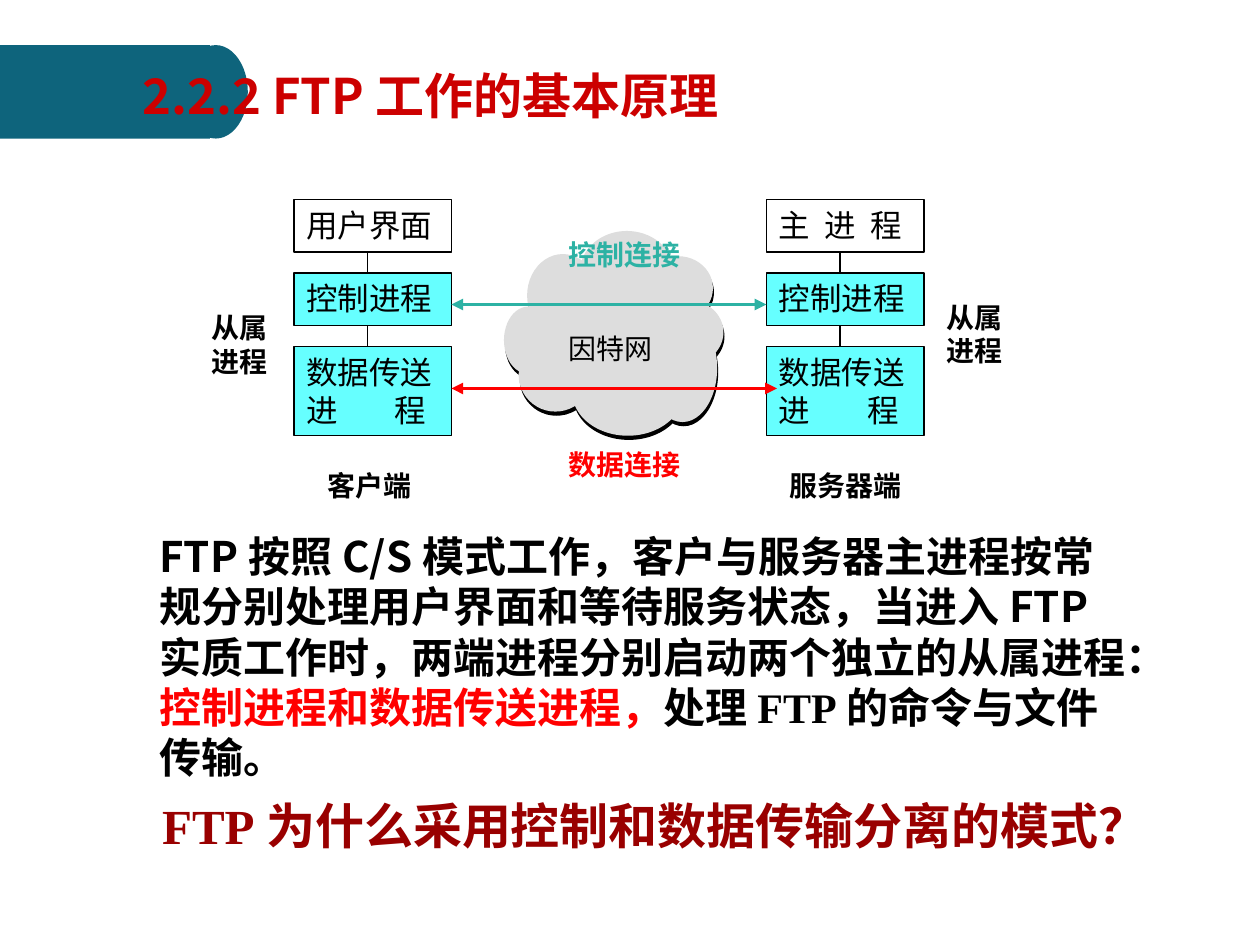
from pptx import Presentation
from pptx import util as u
from pptx.dml.color import RGBColor
from pptx.enum import shapes, text
from pptx.oxml import parse_xml
from pptx.oxml.ns import nsdecls, qn

PX = 7620
CJK, TIMES = "Noto Sans CJK SC", "Times New Roman"
BLACK, RED, TEAL, AQUA = "000000", "FF0000", "2DB2A4", "66FFFF"
BANNER, GREY = "0E647C", "DDDDDD"

puffs = [(552, 220, 90, 79), (502, 242, 68, 79), (480, 292, 46, 64),
         (494, 322, 70, 70), (545, 332, 106, 83), (613, 244, 66, 61),
         (623, 286, 66, 61), (617, 299, 66, 103), (518, 268, 136, 103)]
shades = [(BLACK, 1, 4), (GREY, 0, 0)]
rows = [(190, 50), (260, 50), (330, 85)]
fills = [None, AQUA, AQUA]
sides = [(280, ["用户界面", "控制进程", "数据传送进\t程"]),
         (730, ["主\t进\t程", "控制进程", "数据传送进\t程"])]
stops = {1: [84], 2: [43, 87]}
arrows = [(430, 730, 290, TEAL), (430, 740, 370, RED)]
labels = [("因特网", 530, 310, 110, 44, BLACK, False),
          ("客户端", 300, 440, 120, 44, BLACK, True),
          ("服务器端", 740, 440, 140, 44, BLACK, True),
          ("从属进程", 190, 290, 80, 77, BLACK, True),
          ("从属进程", 890, 280, 80, 77, BLACK, True),
          ("控制连接", 530, 220, 140, 44, TEAL, True),
          ("数据连接", 530, 420, 140, 44, RED, True)]
title = [("2.2.2 FTP工作的基本原理", CJK, "CC0000")]
body = [("FTP按照C/S模式工作，客户与服务器主进程按常规分别处理用户界面和等待服务状态，"
         "当进入FTP实质工作时，两端进程分别启动两个独立的从属进程：", CJK, BLACK),
        ("控制进程和数据传送进程，", TIMES, RED),
        ("处理FTP的命令与文件传输。", TIMES, BLACK)]
ask = [("FTP为什么采用控制和数据传输分离的模式？", TIMES, "990000")]

deck = Presentation()
deck.slide_width, deck.slide_height = 1200 * PX, 900 * PX
slide = deck.slides.add_slide(deck.slide_layouts[6])


def scale(*sizes):
    return [n * PX for n in sizes]


def tint(code):
    return RGBColor.from_string(code)


def draw(kind, area, fill=None, edge=None):
    shape = slide.shapes.add_shape(kind, *scale(*area))
    shape.shadow.inherit = False
    if fill:
        shape.fill.solid()
        shape.fill.fore_color.rgb = tint(fill)
    else:
        shape.fill.background()
    if edge:
        shape.line.color.rgb = tint(edge)
        shape.line.width = u.Pt(0.75)
    else:
        shape.line.fill.background()
    return shape


def write(shape, parts, size, bold=False, middle=False, center=False):
    frame = shape.text_frame
    frame.word_wrap = True
    frame.vertical_anchor = text.MSO_ANCHOR.MIDDLE if middle else text.MSO_ANCHOR.TOP
    para = frame.paragraphs[0]
    para.alignment = text.PP_ALIGN.CENTER if center else text.PP_ALIGN.LEFT
    para.line_spacing = u.Pt(size * 1.2)
    tabs = stops.get(parts[0][0].count("\t"), [])
    if tabs:
        items = "".join(f'<a:tab pos="{x * PX}" algn="l"/>' for x in tabs)
        para._p.get_or_add_pPr().append(
            parse_xml(f'<a:tabLst {nsdecls("a")}>{items}</a:tabLst>'))
    for words, face, color in parts:
        run = para.add_run()
        run.text = words
        font = run.font
        font.size, font.bold, font.name = u.Pt(size), bold, face
        font.color.rgb = tint(color)
        run._r.get_or_add_rPr().find(qn("a:latin")).addnext(
            parse_xml(f'<a:ea {nsdecls("a")} typeface="{CJK}"/>'))


def note(area, parts, size, **style):
    write(slide.shapes.add_textbox(*scale(*area)), parts, size, **style)


def link(x1, y1, x2, y2, color, width, heads=False):
    line = slide.shapes.add_connector(
        shapes.MSO_CONNECTOR.STRAIGHT, *scale(x1, y1, x2, y2))
    line.line.color.rgb = tint(color)
    line.line.width = u.Pt(width)
    if heads:
        for end in ("headEnd", "tailEnd"):
            line.line._get_or_add_ln().append(
                parse_xml(f'<a:{end} {nsdecls("a")} type="triangle"/>'))
    line._element.spPr.append(parse_xml(f'<a:effectLst {nsdecls("a")}/>'))


RECT, OVAL = shapes.MSO_SHAPE.RECTANGLE, shapes.MSO_SHAPE.OVAL
draw(RECT, (0, 43, 200, 89), BANNER)
draw(OVAL, (175, 43, 61, 89), BANNER)
for color, dx, dy in shades:
    for x, y, w, h in puffs:
        draw(OVAL, (x + dx, y + dy, w, h), color)

note((140, 520, 950, 210), body, 24, bold=True, middle=True)
note((100, 50, 620, 80), title, 28, bold=True, middle=True, center=True)
note((137, 743, 973, 85), ask, 28, bold=True, middle=True, center=True)

for left, names in sides:
    for (top, high), fill, name in zip(rows, fills, names):
        box = draw(RECT, (left, top, 150, high), fill, BLACK)
        write(box, [(name, TIMES, BLACK)], 18)
    for (top, high), (below, _) in zip(rows, rows[1:]):
        link(left + 70, top + high, left + 70, below, BLACK, 0.75)

for x1, x2, y, color in arrows:
    link(x1, y, x2, y, color, 2.25, heads=True)
for words, x, y, w, h, color, bold in labels:
    note((x, y, w, h), [(words, TIMES, color)], 16, bold=bold)

deck.save("out.pptx")
